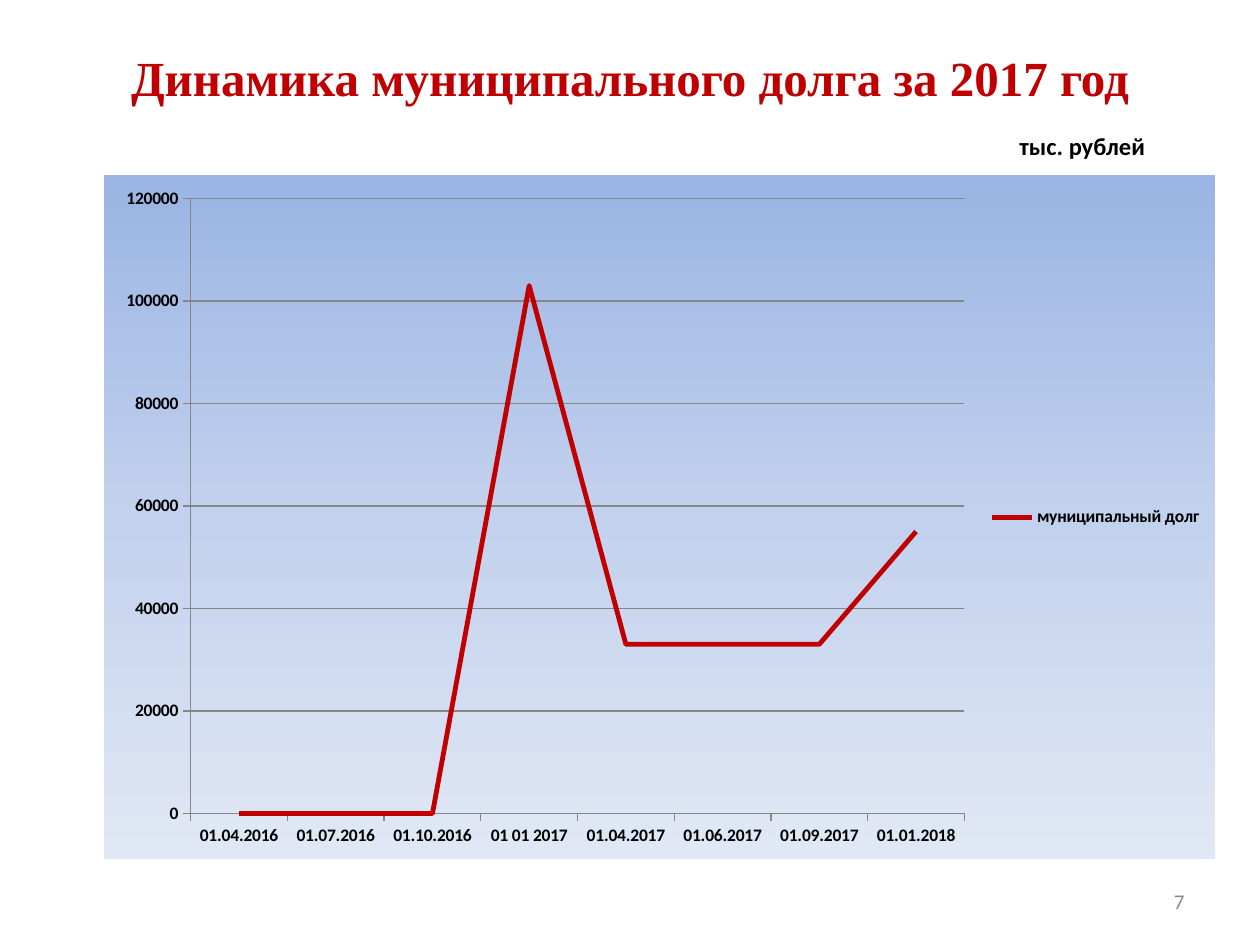
"""Build a slide with a line chart of municipal debt over time."""
from dataclasses import dataclass

from pptx import Presentation
from pptx import oxml
from pptx import util as u
from pptx.chart import data as chart_data
from pptx.dml.color import RGBColor
from pptx.enum import chart as charts, text
from pptx.oxml import ns

RED = RGBColor(0xC0, 0x00, 0x00)
BLACK = RGBColor(0x00, 0x00, 0x00)
GREY = RGBColor(0x8C, 0x8C, 0x8C)
AXIS_GREY = RGBColor(0x86, 0x86, 0x86)
GRADIENT = (
    (0, RGBColor(0x9A, 0xB5, 0xE4)),
    (50, RGBColor(0xC2, 0xD1, 0xED)),
    (100, RGBColor(0xE1, 0xE8, 0xF5)),
)
DEBT = {
    "01.04.2016": 0,
    "01.07.2016": 0,
    "01.10.2016": 0,
    "01 01 2017": 103000,
    "01.04.2017": 33000,
    "01.06.2017": 33000,
    "01.09.2017": 33000,
    "01.01.2018": 55000,
}


@dataclass(frozen=True)
class Area:
    left: float
    top: float
    width: float
    height: float

    def lengths(self) -> tuple:
        return tuple(u.Pt(n) for n in (self.left, self.top, self.width, self.height))


TITLE_AREA = Area(0, 0, 720, 88)
UNIT_AREA = Area(575.5, 71.5, 88.5, 24.25)
CHART_AREA = Area(59.5, 100, 635, 391)
NUMBER_AREA = Area(516, 500.5, 168, 28.75)


def write_text(frame, words: str, *, size: float, color: RGBColor, font: str = "Calibri",
               bold: bool = False, align=text.PP_ALIGN.LEFT,
               anchor=text.MSO_ANCHOR.TOP, wrap: bool = True) -> None:
    frame.word_wrap = wrap
    frame.auto_size = text.MSO_AUTO_SIZE.NONE
    frame.vertical_anchor = anchor
    para = frame.paragraphs[0]
    para.alignment = align
    span = para.add_run()
    span.text = words
    span.font.name = font
    span.font.size = u.Pt(size)
    span.font.bold = bold
    span.font.color.rgb = color


def fill_chart(chart) -> None:
    stops = "".join(
        f'<a:gs pos="{percent * 1000}"><a:srgbClr val="{color}"/></a:gs>'
        for percent, color in GRADIENT
    )
    properties = oxml.parse_xml(
        f'<c:spPr {ns.nsdecls("c", "a")}><a:gradFill><a:gsLst>{stops}</a:gsLst>'
        '<a:lin ang="5400000" scaled="0"/></a:gradFill><a:ln><a:noFill/></a:ln></c:spPr>'
    )
    chart.element.find(ns.qn("c:chart")).addnext(properties)


def style_line(line, color: RGBColor, width: float) -> None:
    line.color.rgb = color
    line.width = u.Pt(width)


def add_debt_chart(page, area: Area) -> None:
    values = chart_data.CategoryChartData(number_format="General")
    values.categories = list(DEBT)
    values.add_series("муниципальный долг", list(DEBT.values()))
    chart = page.shapes.add_chart(
        charts.XL_CHART_TYPE.LINE_STACKED, *area.lengths(), values).chart
    chart.has_title = False
    chart.font.name = "Calibri"
    chart.font.size = u.Pt(10)
    chart.font.bold = True
    chart.font.color.rgb = BLACK
    chart.has_legend = True
    chart.legend.position = charts.XL_LEGEND_POSITION.RIGHT
    chart.legend.include_in_layout = False
    chart.plots[0].vary_by_categories = False
    for axis in (chart.category_axis, chart.value_axis):
        axis.major_tick_mark = charts.XL_TICK_MARK.OUTSIDE
        axis.minor_tick_mark = charts.XL_TICK_MARK.NONE
        style_line(axis.format.line, AXIS_GREY, 0.75)
    chart.value_axis.has_major_gridlines = True
    style_line(chart.value_axis.major_gridlines.format.line, AXIS_GREY, 0.75)
    series = chart.plots[0].series[0]
    series.smooth = False
    series.marker.style = charts.XL_MARKER_STYLE.NONE
    style_line(series.format.line, RED, 2.75)
    fill_chart(chart)


def main() -> None:
    deck = Presentation()
    deck.slide_width, deck.slide_height = u.Pt(720), u.Pt(540)
    page = deck.slides.add_slide(deck.slide_layouts[5])

    title = page.shapes.title
    title.left, title.top, title.width, title.height = TITLE_AREA.lengths()
    write_text(title.text_frame, "Динамика муниципального долга за 2017 год", size=28,
               color=RED, font="Times New Roman", bold=True,
               align=text.PP_ALIGN.CENTER, anchor=text.MSO_ANCHOR.MIDDLE)

    unit_box = page.shapes.add_textbox(*UNIT_AREA.lengths())
    write_text(unit_box.text_frame, "тыс. рублей", size=14, color=BLACK, bold=True, wrap=False)

    add_debt_chart(page, CHART_AREA)

    number_box = page.shapes.add_textbox(*NUMBER_AREA.lengths())
    write_text(number_box.text_frame, "7", size=12, color=GREY,
               align=text.PP_ALIGN.RIGHT, anchor=text.MSO_ANCHOR.MIDDLE)

    deck.save("out.pptx")


if __name__ == "__main__":
    main()
